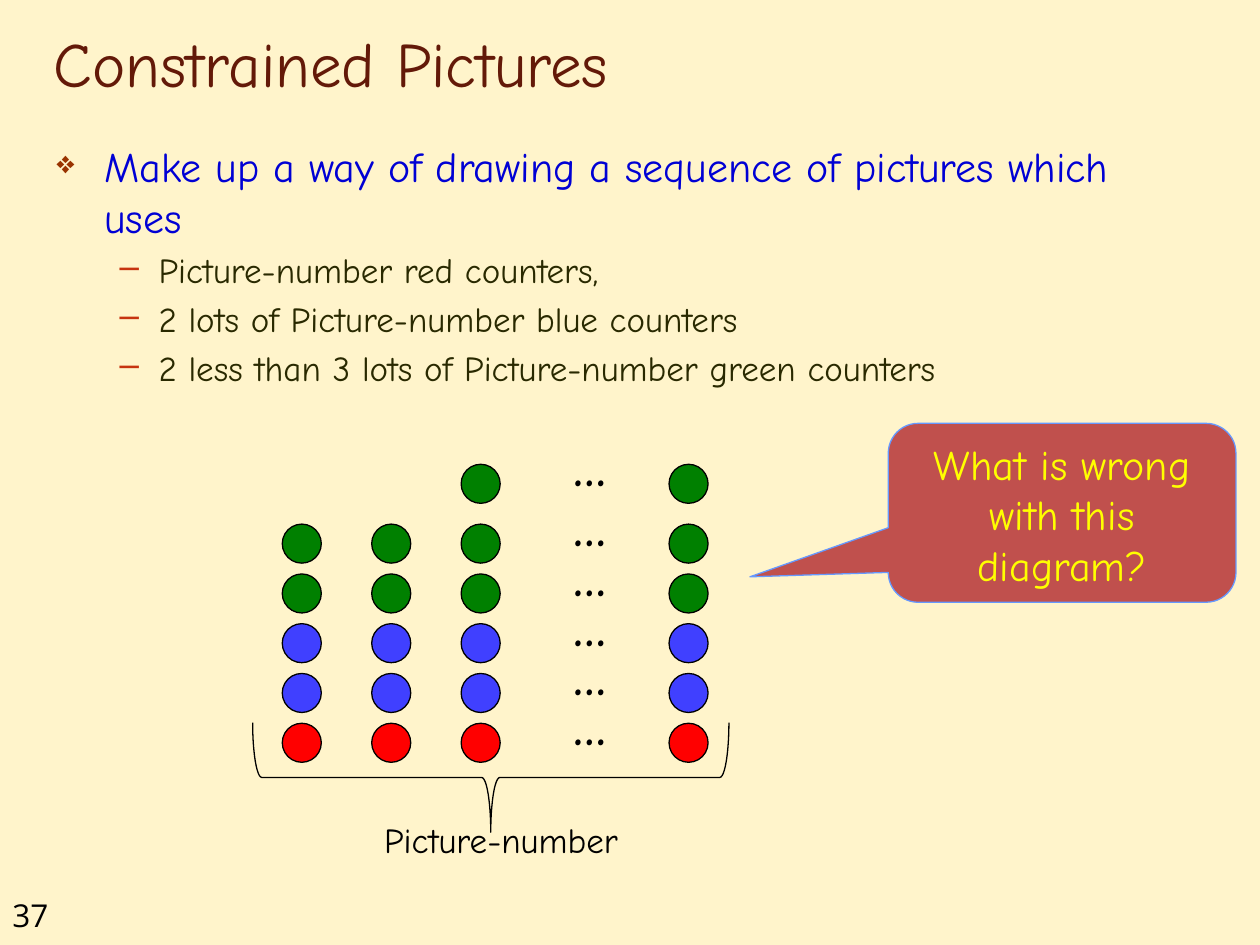
from lxml.etree import SubElement
from pptx import Presentation
from pptx.dml.color import RGBColor
from pptx.enum.shapes import MSO_SHAPE as Shape
from pptx.enum.text import MSO_ANCHOR as Anchor, PP_ALIGN as Align
from pptx.oxml.ns import qn
from pptx.util import Inches, Pt

COLORS = {
    "paper": "FFF4CB", "title": "631908", "lead": "0000D4", "detail": "292900",
    "diamond": "993300", "dash": "C6330F", "ink": "000000",
    "red": "FF0000", "blue": "4040FF", "green": "008000",
    "callout": "C0504D", "callout_edge": "6699FF", "question": "FFFF00",
}
FONT = "Comic Neue"
TITLE = "Constrained Pictures"
LEAD = "Make up a way of drawing a sequence of pictures which uses"
DETAILS = [
    "Picture-number red counters,",
    "2 lots of Picture-number blue counters",
    "2 less than 3 lots of Picture-number green counters",
]
COUNT_LABEL = "Picture-number"
QUESTION = "What is wrong with this diagram?"
PAGE = "37"

COUNTER_ROWS = [
    ("red", [0, 1, 2, 3]),
    ("blue", [0, 1, 2, 3]),
    ("blue", [0, 1, 2, 3]),
    ("green", [0, 1, 2, 3]),
    ("green", [0, 1, 2, 3]),
    ("green", [2, 3]),
]
COUNTER = 0.31
FIRST_COLUMN, COLUMN_STEP, LAST_COLUMN = 2.24, 0.71, 5.31
BOTTOM_ROW, ROW_STEP, TOP_ROW_LIFT = 5.74, 0.395, 0.08
DOTS_LEFT, DOTS_WIDTH, DOTS_HEIGHT, DOTS_RISE = 4.45, 0.63, 0.57, 0.26


def rgb(name):
    return RGBColor.from_string(COLORS[name])


def write(paragraph, text, size, color, font=FONT, bold=False):
    run = paragraph.add_run()
    run.text = text
    run.font.name, run.font.size, run.font.bold = font, Pt(size), bold
    run.font.color.rgb = rgb(color)


def add_text(parent, box, text, size, color, wrap=True, **style):
    frame = parent.add_textbox(*map(Inches, box)).text_frame
    frame.word_wrap = wrap
    write(frame.paragraphs[0], text, size, color, **style)
    return frame


def add_shape(parent, kind, box, fill, line="ink"):
    shape = parent.add_shape(kind, *map(Inches, box))
    shape.shadow.inherit = False
    if fill:
        shape.fill.solid()
        shape.fill.fore_color.rgb = rgb(fill)
    else:
        shape.fill.background()
    shape.line.color.rgb = rgb(line)
    shape.line.width = Pt(0.75)
    return shape


def set_bullet(paragraph, mark, color, margin, hang, share=100):
    props = paragraph._p.get_or_add_pPr()
    props.set("marL", str(Inches(margin)))
    props.set("indent", str(-Inches(hang)))
    before = SubElement(props, qn("a:spcBef"))
    SubElement(before, qn("a:spcPct"), val="20000")
    tint = SubElement(props, qn("a:buClr"))
    SubElement(tint, qn("a:srgbClr"), val=COLORS[color])
    SubElement(props, qn("a:buSzPct"), val=str(share * 1000))
    SubElement(props, qn("a:buChar"), char=mark)


def add_body(shapes):
    frame = add_text(shapes, (0.35, 1.07, 9.21, 2.36), LEAD, 24, "lead")
    set_bullet(frame.paragraphs[0], "❖", "diamond", 0.38, 0.38, 75)
    for detail in DETAILS:
        paragraph = frame.add_paragraph()
        paragraph.level = 1
        set_bullet(paragraph, "–", "dash", 0.81, 0.31)
        write(paragraph, detail, 20, "detail")


def add_counters(shapes):
    columns = [FIRST_COLUMN + i * COLUMN_STEP for i in range(3)] + [LAST_COLUMN]
    for row, (color, filled) in enumerate(COUNTER_ROWS):
        lift = TOP_ROW_LIFT if row == len(COUNTER_ROWS) - 1 else 0
        top = BOTTOM_ROW - row * ROW_STEP - lift
        group = shapes.add_group_shape().shapes
        for column in filled:
            add_shape(group, Shape.OVAL, (columns[column], top, COUNTER, COUNTER), color)
        add_text(group, (DOTS_LEFT, top - DOTS_RISE, DOTS_WIDTH, DOTS_HEIGHT),
                 "…", 28, "ink", bold=True)


def add_callout(shapes):
    callout = add_shape(shapes, Shape.ROUNDED_RECTANGULAR_CALLOUT,
                        (7.05, 3.36, 2.76, 1.42), "callout", "callout_edge")
    for i, value in enumerate((-0.898, 0.358, 0.167)):
        callout.adjustments[i] = value
    frame = callout.text_frame
    frame.word_wrap = True
    frame.vertical_anchor = Anchor.TOP
    frame.paragraphs[0].alignment = Align.CENTER
    write(frame.paragraphs[0], QUESTION, 24, "question")


def main():
    deck = Presentation()
    deck.slide_width, deck.slide_height = Inches(10), Inches(7.5)
    slide = deck.slides.add_slide(deck.slide_layouts[6])
    slide.background.fill.solid()
    slide.background.fill.fore_color.rgb = rgb("paper")
    shapes = slide.shapes

    add_text(shapes, (0, 7.06, 0.75, 0.4), PAGE, 18, "ink", font="Open Sans")
    title = add_text(shapes, (0.33, 0.17, 8.5, 0.67), TITLE, 36, "title")
    title.vertical_anchor = Anchor.BOTTOM
    add_body(shapes)
    add_counters(shapes)
    brace = add_shape(shapes, Shape.LEFT_BRACE, (3.46, 4.28, 0.87, 3.78), None)
    brace.rotation = 270
    add_text(shapes, (2.95, 6.45, 2.19, 0.44), COUNT_LABEL, 20, "ink", wrap=False)
    add_callout(shapes)
    deck.save("out.pptx")


if __name__ == "__main__":
    main()
